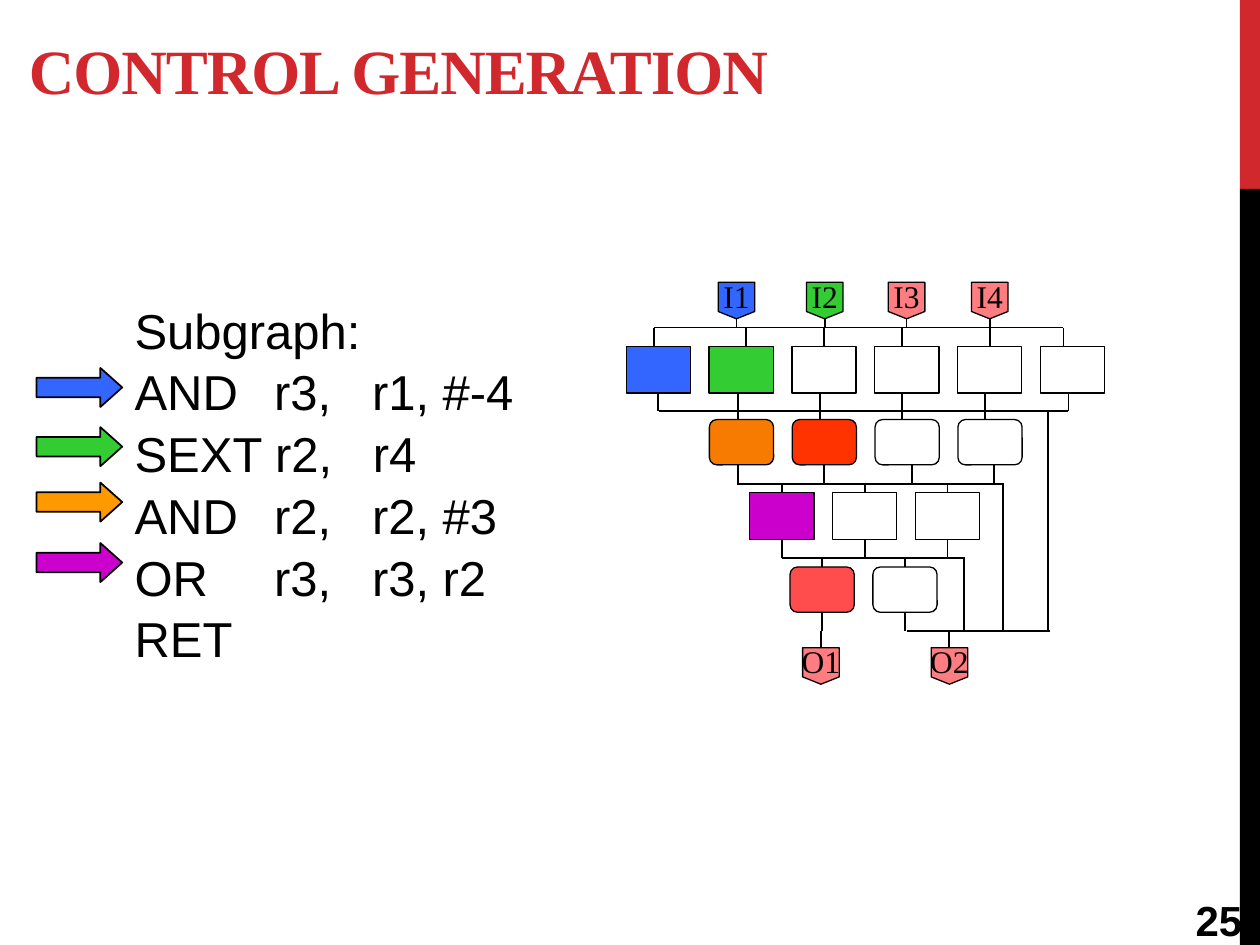
from lxml import etree
from pptx import Presentation
from pptx.dml.color import RGBColor
from pptx.enum import shapes, text
from pptx.oxml import ns
from pptx.util import Inches, Pt

RED = RGBColor(0xD1, 0x28, 0x2E)
BLACK = RGBColor(0, 0, 0)
WHITE = RGBColor(0xFF, 0xFF, 0xFF)
BLUE = RGBColor(0x33, 0x66, 0xFF)
GREEN = RGBColor(0x33, 0xCC, 0x33)
AMBER = RGBColor(0xFF, 0x99, 0x00)
ORANGE = RGBColor(0xF6, 0x7B, 0x00)
SCARLET = RGBColor(0xFF, 0x33, 0x00)
CORAL = RGBColor(0xFF, 0x4D, 0x4D)
PURPLE = RGBColor(0xCC, 0x00, 0xCC)
PINK = RGBColor(0xFF, 0x7C, 0x80)

RECT = shapes.MSO_SHAPE.RECTANGLE
ROUNDED = shapes.MSO_SHAPE.FLOWCHART_ALTERNATE_PROCESS
PORT = shapes.MSO_SHAPE.FLOWCHART_OFFPAGE_CONNECTOR
ARROW = shapes.MSO_SHAPE.RIGHT_ARROW
SERIF, SANS = "Times New Roman", "Arial"

# Content
TITLE = "CONTROL GENERATION"
SUBGRAPH = ["Subgraph:", "AND\t r3,   r1, #-4", "SEXT r2,   r4",
            "AND\t r2,   r2, #3", "OR\t r3,   r3, r2", "RET"]
SIDE_BARS = [(0, 1.5, RED), (1.5, 6, BLACK)]  # top, height, colour
STEP_ARROWS = [(2.92, BLUE), (3.39, GREEN), (3.83, AMBER), (4.31, PURPLE)]

# Rows of function units: left, top, height, outline, colours
UNIT_ROWS = [
    (4.97, 2.75, 0.37, RECT, [BLUE, GREEN, WHITE, WHITE, WHITE, WHITE]),
    (5.63, 3.33, 0.36, ROUNDED, [ORANGE, SCARLET, WHITE, WHITE]),
    (5.95, 3.91, 0.37, RECT, [PURPLE, WHITE, WHITE]),
    (6.27, 4.5, 0.36, ROUNDED, [CORAL, WHITE]),
]
UNIT_WIDTH, UNIT_PITCH = 0.51, 0.6575

# Inputs and outputs: label, left, top, colour, label width
PORTS = [("I1", 5.7, 2.24, BLUE, 0.41), ("I2", 6.4, 2.24, GREEN, 0.41),
         ("I3", 7.05, 2.24, PINK, 0.41), ("I4", 7.71, 2.24, PINK, 0.41),
         ("O1", 6.37, 5.14, PINK, 0.51), ("O2", 7.39, 5.14, PINK, 0.51)]
PORT_SIZE = 0.29

# Buses: y, left, right, y above, wires from above, y below, wires to below
BUSES = [
    (2.6, 5.19, 8.44, 2.53, [5.85, 6.54, 7.2, 7.86],
     2.75, [5.19, 5.92, 6.54, 7.16, 7.86, 8.44]),
    (3.26, 5.23, 8.48, 3.12, [5.23, 5.86, 6.51, 7.16, 7.82, 8.48],
     3.33, [5.86, 6.51, 7.16, 7.82]),
    (3.84, 5.85, 7.97, 3.69, [5.86, 6.54, 7.24, 7.89],
     3.91, [6.2, 6.86, 7.53]),
    (4.43, 6.21, 7.66, 4.28, [6.21, 6.86, 7.51], 4.5, [6.53, 7.19]),
    (5.01, 7.2, 8.33, 4.86, [6.53, 7.2], 5.14, [6.52, 7.54]),
]
BYPASSES = [(7.65, 4.43), (7.96, 3.84), (8.32, 3.26)]  # x, top

prs = Presentation()
prs.slide_width, prs.slide_height = Inches(10), Inches(7.5)
slide = prs.slides.add_slide(prs.slide_layouts[5])
nodes = []  # middle x, top, bottom, shape


def add_figure(preset, left, top, width, height, fill, line=0.75):
    figure = slide.shapes.add_shape(
        preset, Inches(left), Inches(top), Inches(width), Inches(height))
    figure.shadow.inherit = False
    figure.fill.solid()
    figure.fill.fore_color.rgb = fill
    if line:
        figure.line.color.rgb = BLACK
        figure.line.width = Pt(line)
    else:
        figure.line.fill.background()
    return figure


def add_node(preset, left, top, width, height, fill):
    node = add_figure(preset, left, top, width, height, fill)
    nodes.append((left + width / 2, top, top + height, node))


def add_text(lines, left, top, width, height, holder=None, font=SERIF, size=18,
             color=BLACK, bold=False, wrap=True, spacing=None, tracking=None,
             align=text.PP_ALIGN.LEFT, anchor=text.MSO_ANCHOR.TOP):
    box = holder or slide.shapes.add_textbox(0, 0, 0, 0)
    box.left, box.top = Inches(left), Inches(top)
    box.width, box.height = Inches(width), Inches(height)
    frame = box.text_frame
    frame.word_wrap = wrap
    frame.auto_size = text.MSO_AUTO_SIZE.NONE
    frame.vertical_anchor = anchor
    for i, line in enumerate(lines):
        para = frame.add_paragraph() if i else frame.paragraphs[0]
        para.alignment = align
        if spacing:
            para.line_spacing = spacing
        run = para.add_run()
        run.text = line
        run.font.name, run.font.size, run.font.bold = font, Pt(size), bold
        run.font.color.rgb = color
        if tracking:
            run.font._element.set("spc", str(round(tracking * 100)))


def add_wire(x1, y1, x2, y2):
    wire = slide.shapes.add_connector(
        shapes.MSO_CONNECTOR.STRAIGHT, *map(Inches, (x1, y1, x2, y2)))
    wire.line.color.rgb = BLACK
    wire.line.width = Pt(1)
    etree.SubElement(wire._element.spPr, ns.qn("a:effectLst"))
    return wire


def add_drop(x, top, bottom):
    """Vertical wire, joined to any node whose side middle it meets."""
    above = [n for n in nodes if abs(n[0] - x) < 0.02 and abs(n[2] - top) < 0.02]
    below = [n for n in nodes if abs(n[0] - x) < 0.02 and abs(n[1] - bottom) < 0.02]
    for middle, *_ in above + below:
        x = middle
    wire = add_wire(x, top, x, bottom)
    if above:
        wire.begin_connect(above[0][3], 2)
    if below:
        wire.end_connect(below[0][3], 0)


# Side bars and title
for top, height, color in SIDE_BARS:
    add_figure(RECT, 9.84, top, 0.16, height, color, line=0)
add_text([TITLE], 0.13, 0, 9.18, 0.9, holder=slide.shapes.title, size=36,
         color=RED, bold=True, tracking=-0.6, anchor=text.MSO_ANCHOR.BOTTOM)

# Function units and ports
for left, top, height, preset, colors in UNIT_ROWS:
    for column, color in enumerate(colors):
        add_node(preset, left + column * UNIT_PITCH, top, UNIT_WIDTH, height, color)
for label, left, top, color, width in PORTS:
    add_node(PORT, left, top, PORT_SIZE, PORT_SIZE, color)

# Wiring
for y, left, right, y_above, from_above, y_below, to_below in BUSES:
    add_wire(left, y, right, y)
    for x in from_above:
        add_drop(x, y_above, y)
    for x in to_below:
        add_drop(x, y, y_below)
for x, top in BYPASSES:
    add_wire(x, top, x, BUSES[-1][0])

# Port labels, centred on their ports
for label, left, top, color, width in PORTS:
    add_text([label], left + (PORT_SIZE - width) / 2, top - 0.09, width, 0.4,
             wrap=False, align=text.PP_ALIGN.CENTER)

# Instruction list with step arrows
add_text(SUBGRAPH, 0.97, 2.31, 3.55, 2.9, font=SANS, size=28, spacing=1.05)
for top, color in STEP_ARROWS:
    arrow = add_figure(ARROW, 0.29, top, 0.68, 0.31, color, line=1)
    arrow.adjustments[1] = 0.56

# Slide number
add_text(["25"], 9.39, 7.1, 1.44, 0.4, font=SANS, size=24, bold=True,
         anchor=text.MSO_ANCHOR.MIDDLE)

prs.save("out.pptx")
